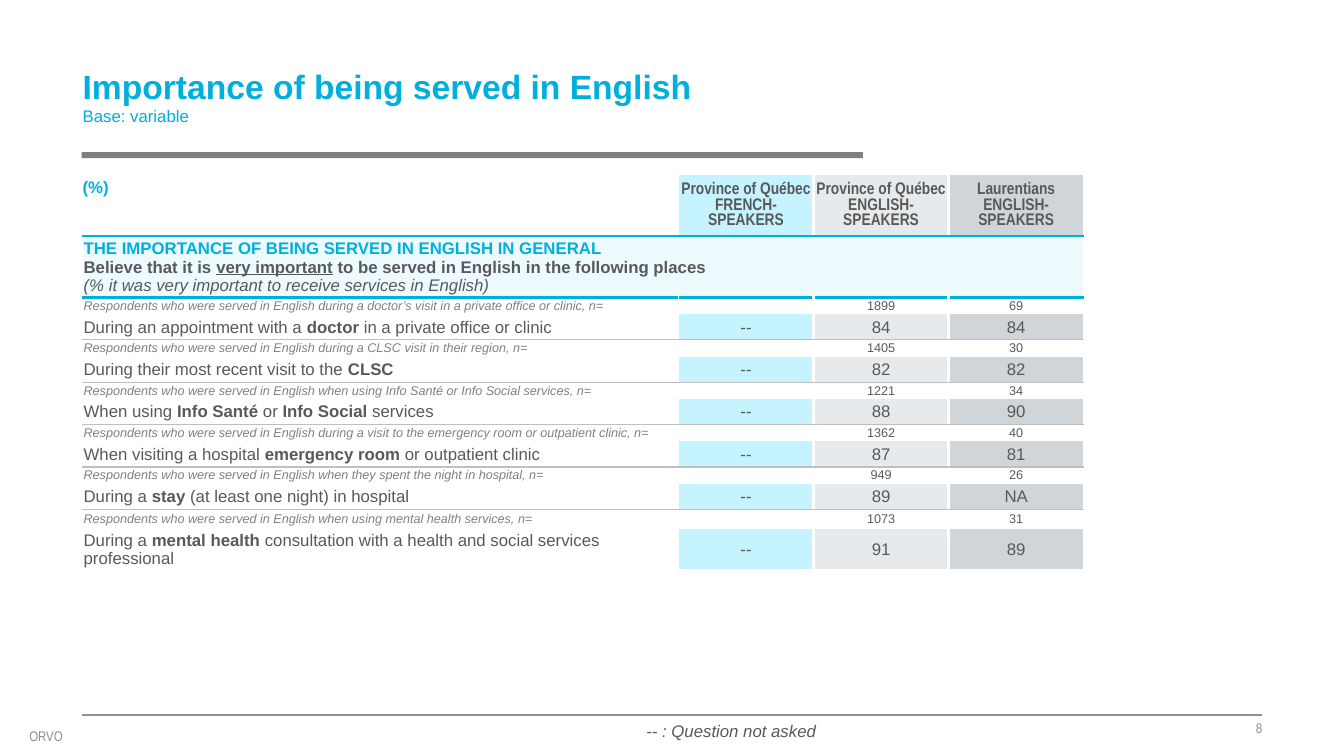
from lxml import etree
from pptx import Presentation
from pptx import util as u
from pptx.dml.color import RGBColor
from pptx.enum import shapes, text
from pptx.oxml import ns

WIDTH, HEIGHT = 13.33, 7.5
CYAN, GREY, MUTED, FOOTER, WHITE = "00AFDC", "595959", "808080", "8C8C8C", "FFFFFF"
COLUMN_FILLS = [WHITE, "C5F3FF", "E7EAEC", "CFD5D8"]
HEADINGS = ["Province of Québec FRENCH-SPEAKERS", "Province of Québec ENGLISH-SPEAKERS",
            "Laurentians\nENGLISH-SPEAKERS"]
SECTION = ["THE IMPORTANCE OF BEING SERVED IN ENGLISH IN GENERAL",
           "Believe that it is |very important| to be served in English in the following places",
           "(% it was very important to receive services in English)"]
BASE = "Respondents who were served in English "
QUESTIONS = [
    ("during a doctor’s visit in a private office or clinic, n=", "1899", "69",
     "During an appointment with a |doctor| in a private office or clinic", "84", "84"),
    ("during a CLSC visit in their region, n=", "1405", "30",
     "During their most recent visit to the |CLSC", "82", "82"),
    ("when using Info Santé or Info Social services, n=", "1221", "34",
     "When using |Info Santé |or| Info Social |services", "88", "90"),
    ("during a visit to the emergency room or outpatient clinic, n=", "1362", "40",
     "When visiting a hospital |emergency room| or outpatient clinic", "87", "81"),
    ("when they spent the night in hospital, n=", "949", "26",
     "During a |stay| (at least one night) in hospital", "89", "NA"),
    ("when using mental health services, n=", "1073", "31",
     "During a |mental health |consultation with a health and social services professional",
     "91", "89"),
]
COLUMN_WIDTHS = [5.91, 1.34, 1.34, 1.34]
ROW_HEIGHTS = [0.54, 0.57] + [0.16, 0.26] * 5 + [0.19, 0.39]


def color(value):
    return RGBColor.from_string(value)


def grid(left, top, width, height):
    return [u.Inches(share * size / 100) for share, size in
            ((left, WIDTH), (top, HEIGHT), (width, WIDTH), (height, HEIGHT))]


def format_run(run, size, tint, name="Arial", bold=False, italic=False):
    run.font.size = u.Pt(size)
    run.font.name = name
    run.font.bold = bold
    run.font.italic = italic
    run.font.color.rgb = color(tint)


def write(frame, content, size, tint, align="LEFT", **style):
    frame.text = content
    for paragraph in frame.paragraphs:
        paragraph.alignment = getattr(text.PP_ALIGN, align)
        for run in paragraph.runs:
            format_run(run, size, tint, **style)


def write_marked(paragraph, content, size, tint, **style):
    paragraph.text = ""
    marked = []
    for index, part in enumerate(content.split("|")):
        run = paragraph.add_run()
        run.text = part
        format_run(run, size, tint, **style)
        if index % 2:
            marked.append(run)
    return marked


def set_margins(frame, margin=0):
    frame.margin_left = frame.margin_right = u.Inches(margin)
    frame.margin_top = frame.margin_bottom = u.Inches(margin)


def add_title(slide):
    title = slide.shapes.title
    title.left, title.top, title.width, title.height = grid(6.15, 5.33, 61.06, 14.67)
    frame = title.text_frame
    set_margins(frame)
    frame.auto_size = text.MSO_AUTO_SIZE.NONE
    frame.vertical_anchor = text.MSO_ANCHOR.MIDDLE
    write(frame, "Importance of being served in English\vBase: variable", 24, CYAN, bold=True)
    subtitle = frame.paragraphs[0].runs[1]
    format_run(subtitle, 12, CYAN)


def add_text(slide, box, content, size, tint, margin=0, wrap=True, **style):
    frame = slide.shapes.add_textbox(*grid(*box)).text_frame
    frame.word_wrap = wrap
    set_margins(frame, margin)
    frame.vertical_anchor = text.MSO_ANCHOR.MIDDLE
    write(frame, content, size, tint, **style)


def add_rules(slide):
    bar = slide.shapes.add_shape(shapes.MSO_SHAPE.RECTANGLE, *grid(6.08, 20.13, 58.13, 0.8))
    bar.shadow.inherit = False
    bar.fill.solid()
    bar.fill.fore_color.rgb = color("7F7F7F")
    bar.line.fill.background()
    left, top, width, _ = grid(6.08, 94.53, 87.84, 0)
    line = slide.shapes.add_connector(shapes.MSO_CONNECTOR.STRAIGHT, left, top, left + width, top)
    line.line.color.rgb = color("88959E")
    line.line.width = u.Pt(1.5)
    etree.SubElement(line._element.spPr, ns.qn("a:effectLst"))


def add_border(cell, side, tint, points):
    properties = cell._tc.get_or_add_tcPr()
    edge = etree.SubElement(properties, ns.qn(f"a:ln{side}"), w=str(u.Pt(points)))
    fill = etree.SubElement(edge, ns.qn("a:solidFill"))
    etree.SubElement(fill, ns.qn("a:srgbClr"), val=tint)


def horizontal_border(boundary):
    if boundary == 1:
        return CYAN, 2.25
    if boundary > 2 and boundary % 2 == 0 and boundary < len(ROW_HEIGHTS):
        return "BFBFBF", 1
    return None


def style_cell(cell, row, column):
    if column > 1 and row != 1:
        add_border(cell, "L", WHITE, 2.25)
    if 0 < column < 3 and row != 1:
        add_border(cell, "R", WHITE, 2.25)
    for side, boundary in (("T", row), ("B", row + 1)):
        border = horizontal_border(boundary)
        if border:
            add_border(cell, side, *border)
    cell.fill.solid()
    tinted = row % 2 or row == 0
    cell.fill.fore_color.rgb = color(COLUMN_FILLS[column] if tinted else WHITE)
    cell.margin_left = cell.margin_right = cell.margin_top = u.Inches(0.01)
    cell.margin_bottom = 0
    cell.vertical_anchor = text.MSO_ANCHOR.MIDDLE


def fill_heading(table):
    corner = table.cell(0, 0)
    corner.margin_left = corner.margin_right = 0
    corner.margin_top = corner.margin_bottom = u.Inches(0.05)
    corner.vertical_anchor = text.MSO_ANCHOR.TOP
    write(corner.text_frame, "(%)", 12, CYAN, bold=True)
    corner.text_frame.paragraphs[0].line_spacing = 0.95
    for column, heading in enumerate(HEADINGS, 1):
        write(table.cell(0, column).text_frame, heading, 12, GREY, "CENTER",
              name="Arial Narrow", bold=True)


def fill_section(table):
    cell = table.cell(1, 0)
    cell.merge(table.cell(1, 3))
    cell.fill.fore_color.rgb = color(COLUMN_FILLS[1])
    tint = cell._tc.tcPr.find(ns.qn("a:solidFill"))[0]
    etree.SubElement(tint, ns.qn("a:alpha"), val="30000")
    frame = cell.text_frame
    frame.text = "\n".join(SECTION)
    heading, question, remark = frame.paragraphs
    write_marked(heading, SECTION[0], 12, CYAN, bold=True)
    for run in write_marked(question, SECTION[1], 12, GREY, bold=True):
        run.font.underline = True
    write_marked(remark, SECTION[2], 12, GREY, italic=True)


def fill_question(table, row, question):
    base, english_base, region_base, label, english, region = question
    write(table.cell(row, 0).text_frame, BASE + base, 9, MUTED, italic=True)
    table.cell(row, 1).text_frame.paragraphs[0].font.size = u.Pt(9)
    for column, count in enumerate((english_base, region_base), 2):
        write(table.cell(row, column).text_frame, count, 9, GREY, "CENTER")
    for run in write_marked(table.cell(row + 1, 0).text_frame.paragraphs[0], label, 12, GREY):
        run.font.bold = True
    for column, share in enumerate(("--", english, region), 1):
        write(table.cell(row + 1, column).text_frame, share, 12, GREY, "CENTER")


def add_results(slide):
    box = grid(6.15, 23.07, 74.46, 50.4)
    table = slide.shapes.add_table(len(ROW_HEIGHTS), len(COLUMN_WIDTHS), *box).table
    table.first_row = table.horz_banding = False
    for column, width in enumerate(COLUMN_WIDTHS):
        table.columns[column].width = u.Inches(width)
    for row, height in enumerate(ROW_HEIGHTS):
        table.rows[row].height = u.Inches(height)
        for column in range(len(COLUMN_WIDTHS)):
            style_cell(table.cell(row, column), row, column)
    fill_heading(table)
    fill_section(table)
    for index, question in enumerate(QUESTIONS):
        fill_question(table, 2 + 2 * index, question)


def main():
    presentation = Presentation()
    presentation.slide_width, presentation.slide_height = u.Inches(WIDTH), u.Inches(HEIGHT)
    slide = presentation.slides.add_slide(presentation.slide_layouts[5])
    add_rules(slide)
    add_title(slide)
    add_text(slide, (2.18, 96, 3.08, 2.8), "ORVO", 10, FOOTER, name="Arial Narrow")
    add_text(slide, (65.49, 94.53, 28.43, 3.47), "8", 10, FOOTER, align="RIGHT",
             name="Arial Narrow")
    add_results(slide)
    add_text(slide, (47.71, 94.67, 14.25, 4), "-- : Question not asked", 12, GREY,
             margin=0.05, wrap=False, italic=True)
    presentation.save("out.pptx")


if __name__ == "__main__":
    main()
